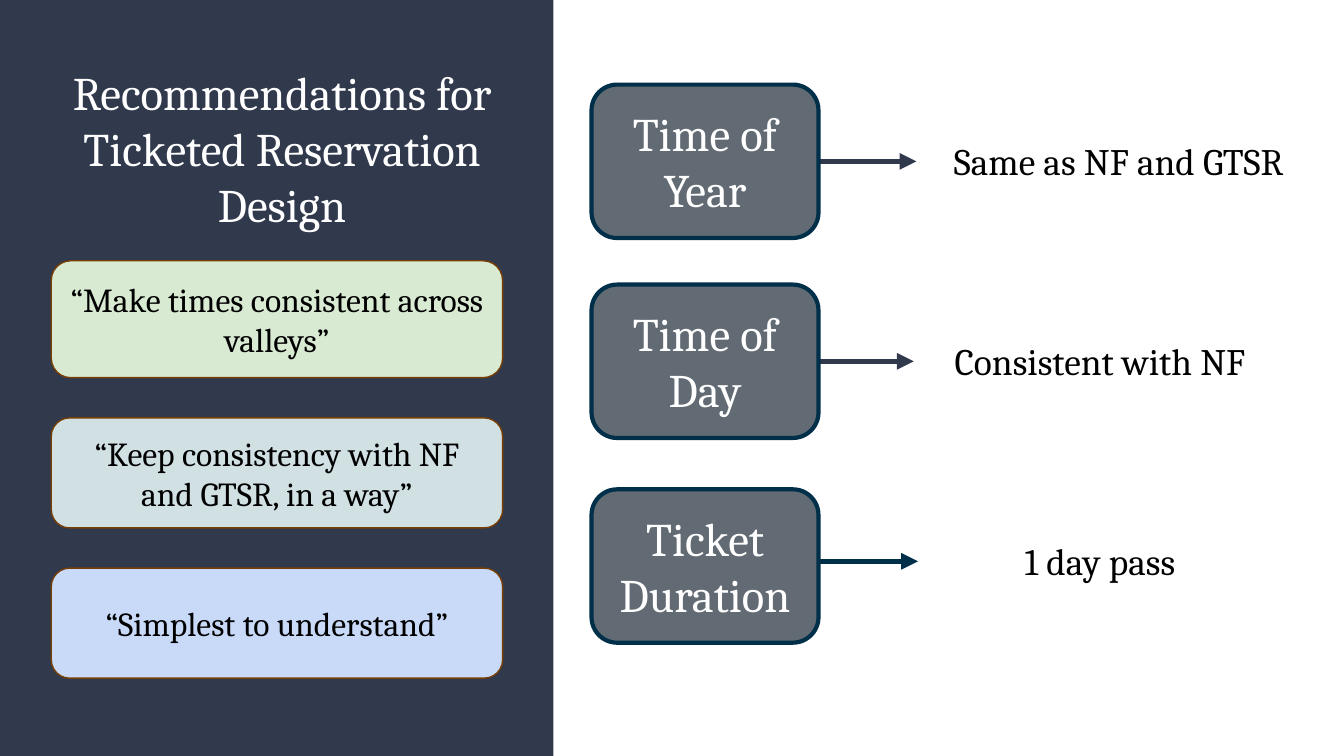
from dataclasses import dataclass

from lxml import etree
from pptx import Presentation
from pptx import util as u
from pptx.dml.color import RGBColor
from pptx.enum import shapes, text
from pptx.oxml.ns import qn


@dataclass(frozen=True)
class Theme:
    font: str = "Cambria"
    navy: str = "31394D"
    deep_blue: str = "002F4A"
    slate: str = "626B73"
    brown: str = "783F04"
    green: str = "D9EAD3"
    teal: str = "D0E0E3"
    blue: str = "C9DAF8"
    white: str = "FFFFFF"
    black: str = "000000"
    heading_size: float = 25
    label_size: float = 20
    quote_size: float = 18
    inset: float = 0.25
    corner: float = 0.167


class SlideBuilder:
    def __init__(self, slide, theme):
        self.slide = slide
        self.theme = theme

    def set_text(self, shape, words, size, color, align="CENTER", anchor="MIDDLE"):
        frame = shape.text_frame
        inset = u.Cm(self.theme.inset)
        frame_format = {
            "margin_left": inset, "margin_right": inset,
            "margin_top": inset, "margin_bottom": inset,
            "word_wrap": True,
            "vertical_anchor": getattr(text.MSO_ANCHOR, anchor),
        }
        for name, value in frame_format.items():
            setattr(frame, name, value)
        paragraph = frame.paragraphs[0]
        paragraph.alignment = getattr(text.PP_ALIGN, align)
        run = paragraph.add_run()
        run.text = words
        for name, value in {"name": self.theme.font, "size": u.Pt(size)}.items():
            setattr(run.font, name, value)
        run.font.color.rgb = RGBColor.from_string(color)

    def text_box(self, box, words, size, color, **layout):
        shape = self.slide.shapes.add_textbox(*map(u.Cm, box))
        self.set_text(shape, words, size, color, **layout)

    def block(self, kind, box, fill, line=None, width=0):
        shape = self.slide.shapes.add_shape(kind, *map(u.Cm, box))
        shape.shadow.inherit = False
        shape.fill.solid()
        shape.fill.fore_color.rgb = RGBColor.from_string(fill)
        if line:
            shape.line.color.rgb = RGBColor.from_string(line)
            shape.line.width = u.Pt(width)
        else:
            shape.line.fill.background()
        return shape

    def card(self, box, words, size, color, fill, line, width):
        kind = shapes.MSO_SHAPE.ROUNDED_RECTANGLE
        shape = self.block(kind, box, fill, line, width)
        shape.adjustments[0] = self.theme.corner
        self.set_text(shape, words, size, color)

    def arrow(self, start, end, y, color):
        connector = self.slide.shapes.add_connector(
            shapes.MSO_CONNECTOR.STRAIGHT, *map(u.Cm, (start, y, end, y)))
        connector.line.color.rgb = RGBColor.from_string(color)
        connector.line.width = u.Pt(3)
        properties = connector._element.spPr
        etree.SubElement(properties.find(qn("a:ln")), qn("a:tailEnd"), type="triangle")
        etree.SubElement(properties, qn("a:effectLst"))


def main():
    theme = Theme()
    presentation = Presentation()
    presentation.slide_width = u.Cm(25.4)
    presentation.slide_height = u.Cm(14.29)
    slide = presentation.slides.add_slide(presentation.slide_layouts[6])
    builder = SlideBuilder(slide, theme)

    # Left panel and title
    builder.block(shapes.MSO_SHAPE.RECTANGLE, (0, 0, 10.46, 14.29), theme.navy)
    builder.text_box((0.15, 0.38, 10.36, 4.83),
                     "Recommendations for Ticketed Reservation Design",
                     theme.heading_size, theme.white)

    # Topics, each with an arrow to its recommendation
    topics = [
        ("Time of Year", 1.6, 17.32, theme.navy,
         "Same as NF and GTSR", 17.07, 7.44, "RIGHT"),
        ("Time of Day", 5.38, 17.27, theme.navy,
         "Consistent with NF", 17.55, 6.48, "CENTER"),
        ("Ticket Duration", 9.25, 17.35, theme.deep_blue,
         "1 day pass", 18.72, 4.14, "CENTER"),
    ]
    row_step = 3.78
    for row, (topic, top, tip, color, answer, left, width, align) in enumerate(topics):
        offset = row * row_step
        builder.text_box((left, 2.36 + offset, width, 1.37), answer,
                         theme.label_size, theme.black, align=align, anchor="TOP")
        builder.arrow(15.49, tip, 3.05 + offset, color)
        builder.card((11.18, top, 4.29, 2.9), topic, theme.heading_size,
                     theme.white, theme.slate, theme.deep_blue, 2.25)

    # Quotes on the panel
    quotes = [
        ("“Make times consistent across valleys”", 4.93, 2.21, theme.green),
        ("“Keep consistency with NF and GTSR, in a way”", 7.9, 2.08, theme.teal),
        ("“Simplest to understand”", 10.74, 2.08, theme.blue),
    ]
    for quote, top, height, fill in quotes:
        builder.card((0.97, top, 8.53, height), quote, theme.quote_size,
                     theme.black, fill, theme.brown, 0.75)

    presentation.save("out.pptx")


if __name__ == "__main__":
    main()
